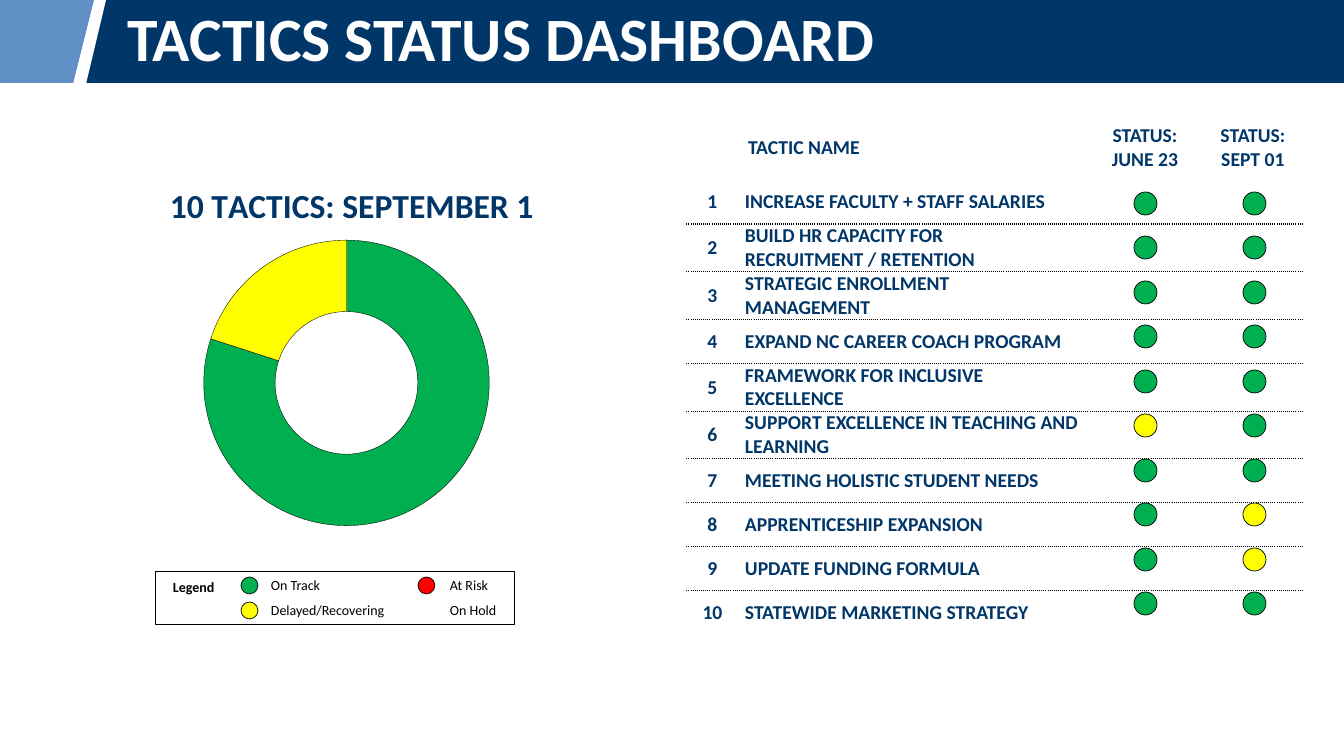
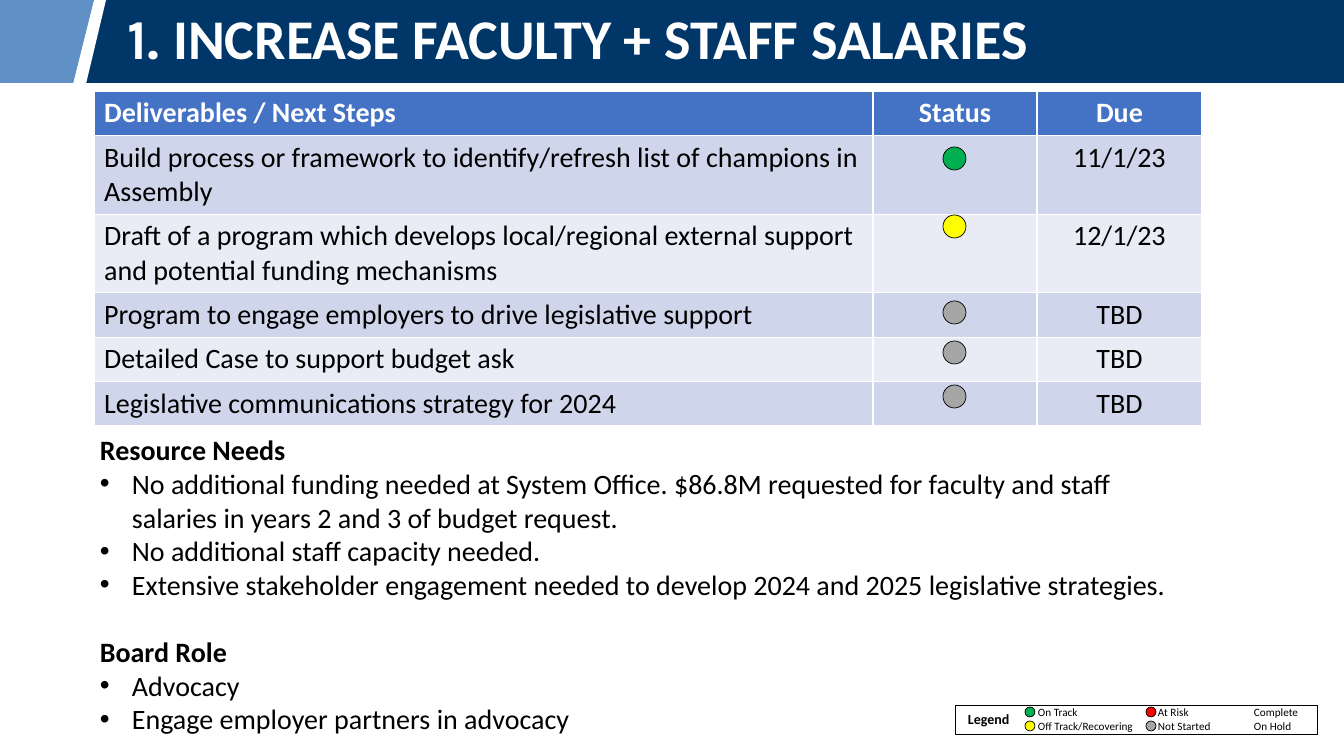
"""Build a two-slide status dashboard: tactics overview and one tactic in detail."""
from lxml.etree import SubElement
from pptx import Presentation
from pptx.chart.data import CategoryChartData
from pptx.dml.color import RGBColor
from pptx.enum.chart import XL_CHART_TYPE
from pptx.enum.shapes import MSO_SHAPE
from pptx.enum.text import MSO_ANCHOR, MSO_AUTO_SIZE, PP_ALIGN
from pptx.oxml import parse_xml
from pptx.oxml.ns import nsdecls, qn
from pptx.util import Pt

PX = 9071


class Theme:
    navy = RGBColor(0x01, 0x36, 0x68)
    sky = RGBColor(0x61, 0x90, 0xC7)
    white = RGBColor(0xFF, 0xFF, 0xFF)
    black = RGBColor(0, 0, 0)
    green = RGBColor(0x00, 0xB0, 0x50)
    yellow = RGBColor(0xFF, 0xFF, 0x00)
    red = RGBColor(0xFF, 0, 0)
    gray = RGBColor(0xA6, 0xA6, 0xA6)
    pale = RGBColor(0xF2, 0xF2, 0xF2)
    table_head = RGBColor(0x44, 0x72, 0xC4)
    bands = (RGBColor(0xCF, 0xD5, 0xEA), RGBColor(0xE9, 0xEB, 0xF5))
    font = "Calibri"
    number_font = "Karla"
    title, detail_title, chart_title = 44, 40, 24
    body, tactic, legend, small = 20, 14, 10, 8


def draw(slide, kind, x, y, width, height, fill, outlined=True):
    shape = slide.shapes.add_shape(kind, x * PX, y * PX, width * PX, height * PX)
    shape.shadow.inherit = False
    shape.fill.solid()
    shape.fill.fore_color.rgb = fill
    if outlined:
        shape.line.color.rgb = Theme.black
        shape.line.width = Pt(0.5)
    else:
        shape.line.fill.background()
    return shape


def write(frame, text, size, color=Theme.black, bold=False, align=PP_ALIGN.LEFT):
    frame.text = text
    for paragraph in frame.paragraphs:
        paragraph.alignment = align
        for run in paragraph.runs:
            run.font.name = Theme.font
            run.font.size = Pt(size)
            run.font.bold = bold
            run.font.color.rgb = color


presentation = Presentation()
presentation.slide_width = 1344 * PX
presentation.slide_height = 756 * PX
layout = presentation.slide_layouts.get_by_name("Title Only")
dashboard = presentation.slides.add_slide(layout)
detail = presentation.slides.add_slide(layout)

header_parts = [
    (MSO_SHAPE.RECTANGLE, 0, 1344, Theme.navy),
    (MSO_SHAPE.PARALLELOGRAM, 27, 79, Theme.white),
    (MSO_SHAPE.PARALLELOGRAM, 4, 90, Theme.sky),
    (MSO_SHAPE.RECTANGLE, 0, 41, Theme.sky),
]
for kind, x, width, fill in header_parts:
    part = draw(dashboard, kind, x, 0, width, 83, fill, outlined=False)
    layout.shapes._spTree.append(part._element)

titles = [
    (dashboard, "TACTICS STATUS DASHBOARD", Theme.title, 887),
    (detail, "1. ", Theme.detail_title, 1200),
]
for slide, text, size, width in titles:
    title = slide.shapes.title
    title.left, title.top, title.width, title.height = 117 * PX, 0, width * PX, 83 * PX
    title.text_frame.auto_size = MSO_AUTO_SIZE.NONE
    title.text_frame.vertical_anchor = MSO_ANCHOR.MIDDLE
    write(title.text_frame, text, size, Theme.white, bold=True)
    title.text_frame.paragraphs[0].line_spacing = 0.9

number = title.text_frame.paragraphs[0].runs[0]
number.font.name = Theme.number_font
heading = title.text_frame.paragraphs[0].add_run()
heading.text = "INCREASE FACULTY + STAFF SALARIES"
heading.font.name = Theme.font
heading.font.size = Pt(Theme.detail_title)
heading.font.bold = True
heading.font.color.rgb = Theme.white

shares = CategoryChartData()
shares.categories = ["1", "2", "3", "4"]
shares.add_series("Series 1", (80, 20, 0, 0))
donut = dashboard.shapes.add_chart(
    XL_CHART_TYPE.DOUGHNUT, 61 * PX, 162 * PX, 571 * PX, 381 * PX, shares
).chart
donut.has_legend = False
donut.font.name = Theme.font
donut.font.size = Pt(Theme.legend)
donut.font.color.rgb = Theme.black
donut.has_title = True
write(donut.chart_title.text_frame, "10 TACTICS: SEPTEMBER 1", Theme.chart_title,
      Theme.navy, bold=True, align=PP_ALIGN.CENTER)
donut.plots[0].vary_by_categories = True
donut.plots[0]._element.find(qn("c:holeSize")).set("val", "75")
for index, color in enumerate((Theme.green, Theme.yellow, Theme.red, Theme.pale)):
    point = donut.plots[0].series[0].points[index]
    point.format.fill.solid()
    point.format.fill.fore_color.rgb = color
    point.format.line.color.rgb = Theme.black
    point.format.line.width = Pt(0.25)

chart_title = donut.chart_title._element
plot_area = donut._chartSpace.chart.plotArea
placements = [
    (chart_title, 1, {"x": 0.18, "y": 0.04}),
    (plot_area, 0, {"x": 0.25, "y": 0.2, "w": 0.5, "h": 0.76}),
]
for area, position, fractions in placements:
    for automatic in area.findall(qn("c:layout")):
        area.remove(automatic)
    placement = parse_xml(f'<c:layout {nsdecls("c")}><c:manualLayout/></c:layout>')
    if area is plot_area:
        SubElement(placement[0], qn("c:layoutTarget")).set("val", "inner")
    for axis in ("x", "y"):
        SubElement(placement[0], qn(f"c:{axis}Mode")).set("val", "edge")
    for side, fraction in fractions.items():
        SubElement(placement[0], qn(f"c:{side}")).set("val", str(fraction))
    area.insert(position, placement)

tactics = [
    ("INCREASE FACULTY + STAFF SALARIES", Theme.green, Theme.green),
    ("BUILD HR CAPACITY FOR RECRUITMENT / RETENTION", Theme.green, Theme.green),
    ("STRATEGIC ENROLLMENT MANAGEMENT", Theme.green, Theme.green),
    ("EXPAND NC CAREER COACH PROGRAM", Theme.green, Theme.green),
    ("FRAMEWORK FOR INCLUSIVE EXCELLENCE", Theme.green, Theme.green),
    ("SUPPORT EXCELLENCE IN TEACHING AND LEARNING", Theme.yellow, Theme.green),
    ("MEETING HOLISTIC STUDENT NEEDS", Theme.green, Theme.green),
    ("APPRENTICESHIP EXPANSION", Theme.green, Theme.yellow),
    ("UPDATE FUNDING FORMULA", Theme.green, Theme.yellow),
    ("STATEWIDE MARKETING STRATEGY", Theme.green, Theme.green),
]
tactic_rows = [("", "TACTIC NAME", "STATUS:\nJUNE 23", "STATUS:\nSEPT 01")]
tactic_rows += [(str(rank), name, "", "") for rank, (name, *_) in enumerate(tactics, 1)]
tactic_table = dashboard.shapes.add_table(
    len(tactic_rows), 4, 687 * PX, 116 * PX, 615 * PX, 504 * PX
).table
tactic_table.horz_banding = False
for column, width in zip(tactic_table.columns, (51, 348, 118, 98)):
    column.width = width * PX
for row_index, texts in enumerate(tactic_rows):
    tactic_table.rows[row_index].height = (44 if row_index else 64) * PX
    for column_index, text in enumerate(texts):
        cell = tactic_table.cell(row_index, column_index)
        cell.fill.background()
        cell.vertical_anchor = MSO_ANCHOR.MIDDLE
        align = PP_ALIGN.LEFT if column_index == 1 else PP_ALIGN.CENTER
        write(cell.text_frame, text, Theme.tactic, Theme.navy, bold=True, align=align)
        if row_index and column_index == 1:
            cell.margin_left = cell.margin_right = 7 * PX
            cell.margin_top = cell.margin_bottom = 0
        edges = [("lnB", 1 <= row_index < len(tactics)), ("lnT", row_index > 1)]
        for edge, dotted in edges:
            if dotted:
                cell._tc.get_or_add_tcPr().insert(0, parse_xml(
                    f'<a:{edge} {nsdecls("a")} w="12700"><a:solidFill>'
                    f'<a:srgbClr val="{Theme.black}"/></a:solidFill>'
                    f'<a:prstDash val="sysDot"/></a:{edge}>'))

for row_index, (_, *statuses) in enumerate(tactics):
    for x, status in zip((1134, 1243), statuses):
        top = 192 + round(row_index * 400 / 9)
        draw(dashboard, MSO_SHAPE.OVAL, x, top, 23, 23, status)

deliverables = [
    ("Build process or framework to identify/refresh list of champions in Assembly",
     "11/1/23", 77, 147, Theme.green),
    ("Draft of a program which develops local/regional external support "
     "and potential funding mechanisms", "12/1/23", 77, 215, Theme.yellow),
    ("Program to engage employers to drive legislative support",
     "TBD", 44, 301, Theme.gray),
    ("Detailed Case to support budget ask", "TBD", 44, 341, Theme.gray),
    ("Legislative communications strategy for 2024", "TBD", 44, 385, Theme.gray),
]
step_rows = [("Deliverables / Next Steps", "Status", "Due", 43)]
step_rows += [(step, "", due, height) for step, due, height, *_ in deliverables]
step_table = detail.shapes.add_table(
    len(step_rows), 3, 94 * PX, 91 * PX, 1108 * PX, 329 * PX
).table
for column, width in zip(step_table.columns, (779, 164, 165)):
    column.width = width * PX
for row_index, (*texts, height) in enumerate(step_rows):
    step_table.rows[row_index].height = height * PX
    is_head = row_index == 0
    for column_index, text in enumerate(texts):
        cell = step_table.cell(row_index, column_index)
        cell.fill.solid()
        cell.fill.fore_color.rgb = (
            Theme.table_head if is_head else Theme.bands[(row_index - 1) % 2])
        write(cell.text_frame, text, Theme.body, Theme.white if is_head else Theme.black,
              bold=is_head, align=PP_ALIGN.CENTER if column_index else PP_ALIGN.LEFT)
for *_, top, status in deliverables:
    draw(detail, MSO_SHAPE.OVAL, 943, top, 23, 23, status)

needs = [
    "Resource Needs",
    "No additional funding needed at System Office. $86.8M requested for faculty "
    "and staff salaries in years 2 and 3 of budget request.",
    "No additional staff capacity needed.",
    "Extensive stakeholder engagement needed to develop 2024 and 2025 legislative strategies.",
    "Board Role",
    "Advocacy",
    "Engage employer partners in advocacy",
]
needs_frame = detail.shapes.add_textbox(90 * PX, 428 * PX, 1096 * PX, 328 * PX).text_frame
needs_frame.word_wrap = True
write(needs_frame, "\n".join(needs), Theme.body)
for paragraph in needs_frame.paragraphs:
    if paragraph.text in ("Resource Needs", "Board Role"):
        paragraph.runs[0].font.bold = True
    else:
        properties = paragraph._p.get_or_add_pPr()
        properties.set("marL", str(32 * PX))
        properties.set("indent", str(-32 * PX))
        SubElement(properties, qn("a:buFont")).set("typeface", "Arial")
        SubElement(properties, qn("a:buChar")).set("char", "•")
needs_frame.paragraphs[4].space_before = Pt(24)

legends = [
    (dashboard, (155, 571, 359, 53), (173, 587), Theme.legend, 17, 585, 25, [
        (241, 271, [("On Track", Theme.green), ("Delayed/Recovering", Theme.yellow)]),
        (418, 450, [("At Risk", Theme.red), ("On Hold", None)]),
    ]),
    (detail, (955, 705, 362, 29), (968, 719), Theme.small, 10, 712, 14, [
        (1025, 1038, [("On Track", Theme.green), ("Off Track/Recovering", Theme.yellow)]),
        (1146, 1158, [("At Risk", Theme.red), ("Not Started", Theme.gray)]),
        (1241, 1254, [("Complete", None), ("On Hold", None)]),
    ]),
]
for slide, border, (head_x, head_middle), size, dot, first, pitch, groups in legends:
    draw(slide, MSO_SHAPE.RECTANGLE, *border, Theme.white)
    labels = [("Legend", head_x, head_middle, Theme.legend, True)]
    for dot_x, text_x, entries in groups:
        for row_index, (name, status) in enumerate(entries):
            middle = first + row_index * pitch
            labels.append((name, text_x, middle, size, False))
            if status is not None:
                draw(slide, MSO_SHAPE.OVAL, dot_x, middle - dot // 2, dot, dot, status)
    for name, x, middle, text_size, bold in labels:
        frame = slide.shapes.add_textbox(
            x * PX, (middle - 8) * PX, 120 * PX, 16 * PX).text_frame
        frame.word_wrap = False
        frame.vertical_anchor = MSO_ANCHOR.MIDDLE
        frame.margin_left = frame.margin_right = 0
        frame.margin_top = frame.margin_bottom = 0
        write(frame, name, text_size, bold=bold)

presentation.save("out.pptx")
